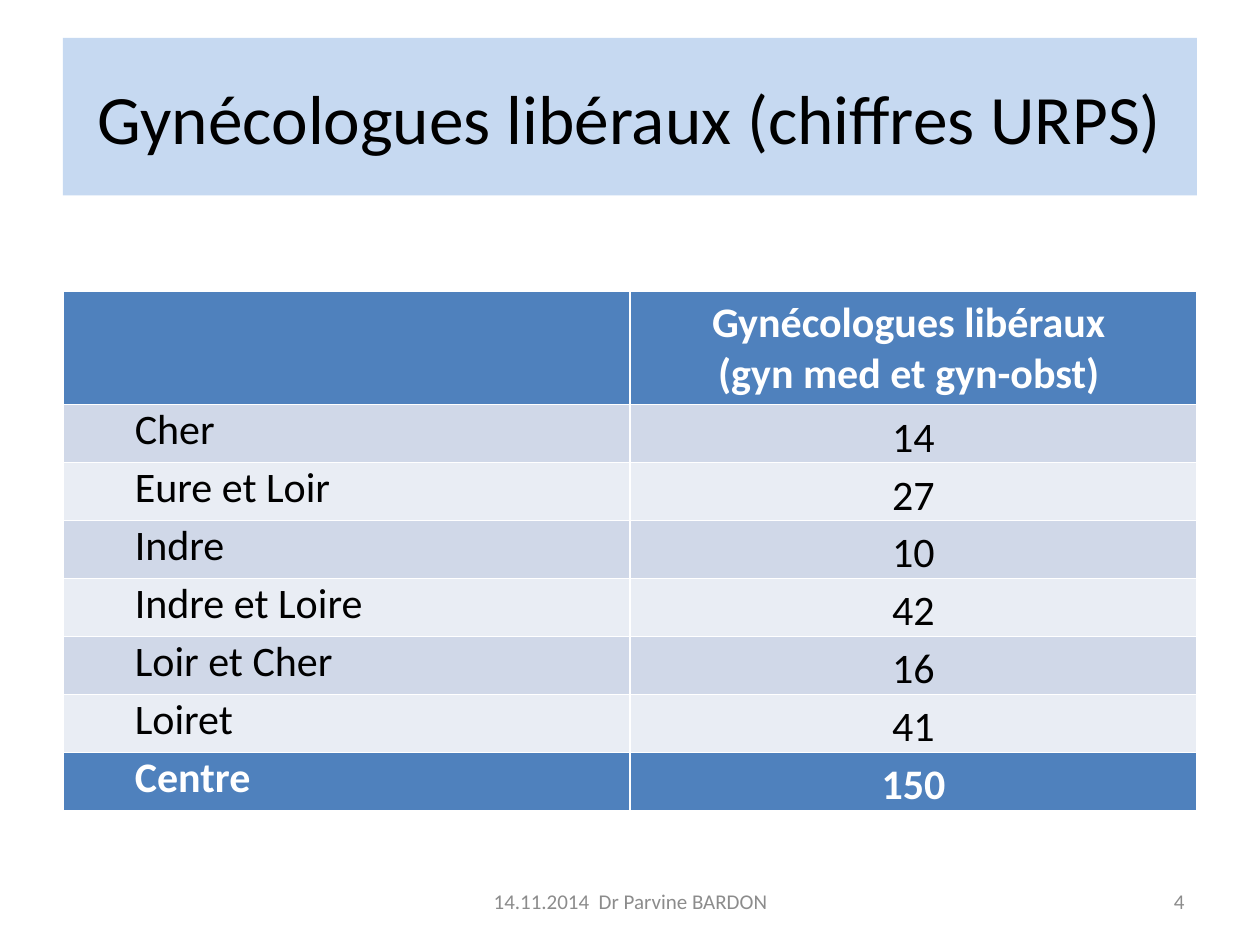
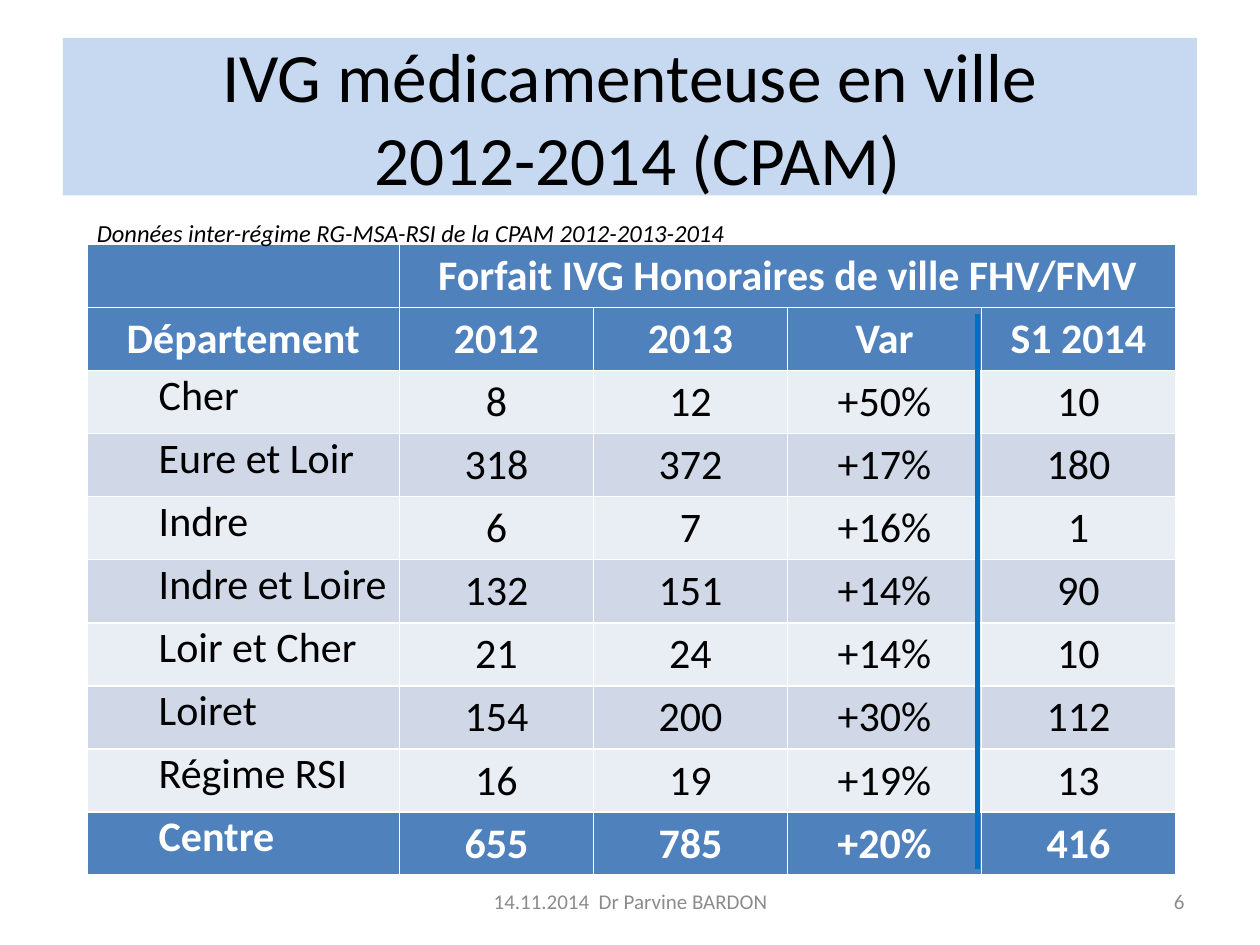
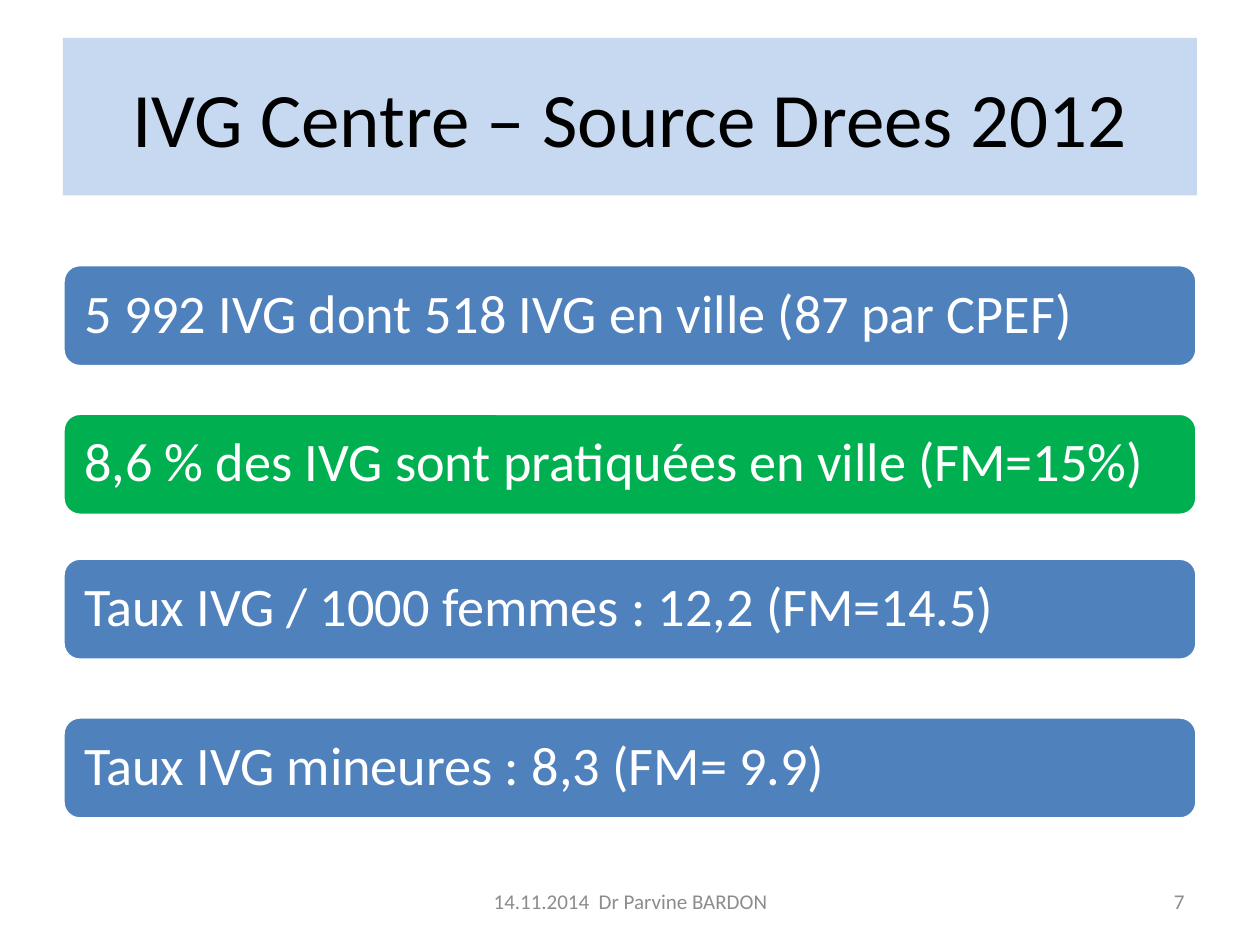
from dataclasses import dataclass

from lxml import etree
from pptx import Presentation
from pptx import util as u
from pptx.dml.color import RGBColor
from pptx.enum import shapes, text
from pptx.oxml import ns

ALIGN = text.PP_ALIGN
ANCHOR = text.MSO_ANCHOR


@dataclass(frozen=True)
class Theme:
    font: str = "Calibri"
    black: str = "000000"
    white: str = "FFFFFF"
    grey: str = "8C8C8C"
    title_band: str = "C6D9F1"
    blue: str = "4F81BD"
    green: str = "00B050"
    rule: str = "0070C0"
    bands: tuple = ("D0D8E8", "E9EDF4")
    title_size: float = 39.6
    large_title_size: float = 44
    card_size: float = 31
    cell_size: float = 24
    note_size: float = 14
    footer_size: float = 12


class Deck:
    FOOTER = "14.11.2014  Dr Parvine BARDON"

    def __init__(self, theme):
        self.theme = theme
        self.prs = Presentation()
        self.prs.slide_width, self.prs.slide_height = u.Inches(10), u.Inches(7.5)
        self.slide = None

    def new_slide(self, title, number, title_size=None):
        """Start a slide with its title band, footer and page number."""
        t = self.theme
        self.slide = self.prs.slides.add_slide(self.prs.slide_layouts[6])
        self.block((0.5, 0.3, 9, 1.25), title, t.title_band, t.black,
                   title_size or t.title_size, align=ALIGN.CENTER)
        self.label((3.42, 6.95, 3.17, 0.4), self.FOOTER, t.footer_size, t.grey,
                   align=ALIGN.CENTER, anchor=ANCHOR.MIDDLE)
        self.label((7.17, 6.95, 2.33, 0.4), str(number), t.footer_size, t.grey,
                   align=ALIGN.RIGHT, anchor=ANCHOR.MIDDLE)

    def fill_text(self, tf, content, size, color, align=ALIGN.LEFT, bold=False,
                  italic=False, spacing=None, indent=0):
        """Fill a text frame; each line of the content becomes a paragraph."""
        for i, line in enumerate(content.split("\n")):
            p = tf.add_paragraph() if i else tf.paragraphs[0]
            p.alignment = align
            if spacing:
                p.line_spacing = spacing
            if indent:
                p._p.get_or_add_pPr().set("marL", str(u.Inches(indent)))
            r = p.add_run()
            r.text = line
            r.font.name, r.font.size = self.theme.font, u.Pt(size)
            r.font.bold, r.font.italic = bold, italic
            r.font.color.rgb = RGBColor.from_string(color)

    def label(self, box, content, size, color, anchor=ANCHOR.TOP, **style):
        tf = self.slide.shapes.add_textbox(*map(u.Inches, box)).text_frame
        tf.word_wrap = True
        tf.vertical_anchor = anchor
        self.fill_text(tf, content, size, color, **style)

    def block(self, box, content, fill, color, size, line=None, inset=None,
              kind=shapes.MSO_SHAPE.RECTANGLE, **style):
        """Draw a filled shape with its text."""
        s = self.slide.shapes.add_shape(kind, *map(u.Inches, box))
        s.shadow.inherit = False
        s.fill.solid()
        s.fill.fore_color.rgb = RGBColor.from_string(fill)
        if line:
            s.line.color.rgb = RGBColor.from_string(line)
            s.line.width = u.Pt(2)
        else:
            s.line.fill.background()
        tf = s.text_frame
        tf.word_wrap = True
        tf.vertical_anchor = ANCHOR.MIDDLE
        if inset:
            tf.margin_left = tf.margin_right = u.Inches(inset)
            tf.margin_top = tf.margin_bottom = u.Inches(inset)
        self.fill_text(tf, content, size, color, **style)

    def card(self, top, content, fill):
        t = self.theme
        self.block((0.5, top, 9, 0.81), content, fill, t.white, t.card_size,
                   line=t.white, inset=0.13, spacing=0.9,
                   kind=shapes.MSO_SHAPE.ROUNDED_RECTANGLE)

    def rule(self, x, top, bottom):
        s = self.slide.shapes.add_connector(
            shapes.MSO_CONNECTOR.STRAIGHT, *map(u.Inches, (x, top, x, bottom)))
        s.line.color.rgb = RGBColor.from_string(self.theme.rule)
        s.line.width = u.Pt(3)
        etree.SubElement(s._element.spPr, ns.qn("a:effectLst"))

    def table(self, left, top, widths, heights, rows, headers=1, tight=False):
        """Draw header rows, banded rows and a total row.

        Tight tables use small cell margins and wider line spacing for values.
        """
        t = self.theme
        s = self.slide.shapes.add_table(
            len(rows), len(widths), *map(u.Inches, (left, top, sum(widths), sum(heights))))
        table = s.table
        table.last_row = True
        for column, width in zip(table.columns, widths):
            column.width = u.Inches(width)
        for i, (row, height, values) in enumerate(zip(table.rows, heights, rows)):
            row.height = u.Inches(height)
            header, total = i < headers, i == len(rows) - 1
            strong = header or total
            for j, (cell, value) in enumerate(zip(row.cells, values)):
                cell.fill.solid()
                cell.fill.fore_color.rgb = RGBColor.from_string(
                    t.blue if strong else t.bands[(i - 1) % 2])
                if header:
                    cell.vertical_anchor = ANCHOR.MIDDLE
                elif j == 0 or tight:
                    cell.margin_left = cell.margin_right = u.Inches(0.07)
                    cell.margin_top = cell.margin_bottom = 0
                if not value:
                    continue
                name = j == 0 and not header
                self.fill_text(cell.text_frame, value, t.cell_size,
                               t.white if strong else t.black, bold=strong,
                               align=ALIGN.JUSTIFY if name else ALIGN.CENTER,
                               indent=0.5 if name else 0,
                               spacing=1.15 if tight and not name and not header else None)
        return table


def gynaecologists(deck):
    deck.new_slide("Gynécologues libéraux (chiffres URPS)", 4)
    rows = [
        ("", "Gynécologues libéraux \n(gyn med et gyn-obst) "),
        ("Cher", "14"),
        ("Eure et Loir", "27"),
        ("Indre", "10"),
        ("Indre et Loire", "42"),
        ("Loir et Cher", "16"),
        ("Loiret", "41"),
        ("Centre", "150"),
    ]
    deck.table(0.5, 2.31, [4.5] * 2, [0.9] + [0.46] * 7, rows, tight=True)


def town_abortions(deck):
    deck.new_slide("IVG médicamenteuse en ville\n 2012-2014 (CPAM)", 6)
    rows = [
        ("", "Forfait IVG Honoraires de ville FHV/FMV", "", "", ""),
        ("Département", "2012", "2013", "Var", "S1 2014"),
        ("Cher", "8", "12", "+50%", "10"),
        ("Eure et Loir", "318", "372", "+17%", "180"),
        ("Indre", "6", "7", "+16%", "1"),
        ("Indre et Loire", "132", "151", "+14%", "90"),
        ("Loir et Cher", "21", "24", "+14%", "10"),
        ("Loiret", "154", "200", "+30%", "112"),
        ("Régime RSI", "16", "19", "+19%", "13"),
        ("Centre", "655", "785", "+20%", "416"),
    ]
    table = deck.table(0.69, 1.94, [2.48] + [1.54] * 4, [0.5] * 10, rows, headers=2)
    table.cell(0, 1).merge(table.cell(0, 4))
    deck.label((0.67, 1.68, 6.93, 0.34),
               "Données inter-régime RG-MSA-RSI de la CPAM 2012-2013-2014",
               deck.theme.note_size, deck.theme.black, italic=True)
    deck.rule(7.76, 2.49, 6.9)


def regional_rates(deck):
    t = deck.theme
    deck.new_slide("IVG Centre – Source Drees 2012", 7, t.large_title_size)
    cards = [
        (2.1, "5 992 IVG dont 518 IVG en ville (87 par CPEF)", t.blue),
        (3.28, "8,6 % des IVG sont pratiquées en ville (FM=15%)", t.green),
        (4.43, "Taux IVG / 1000 femmes : 12,2 (FM=14.5)", t.blue),
        (5.69, "Taux IVG mineures : 8,3 (FM= 9.9)", t.blue),
    ]
    for top, content, fill in cards:
        deck.card(top, content, fill)


def main():
    deck = Deck(Theme())
    gynaecologists(deck)
    town_abortions(deck)
    regional_rates(deck)
    deck.prs.save("out.pptx")


if __name__ == "__main__":
    main()
